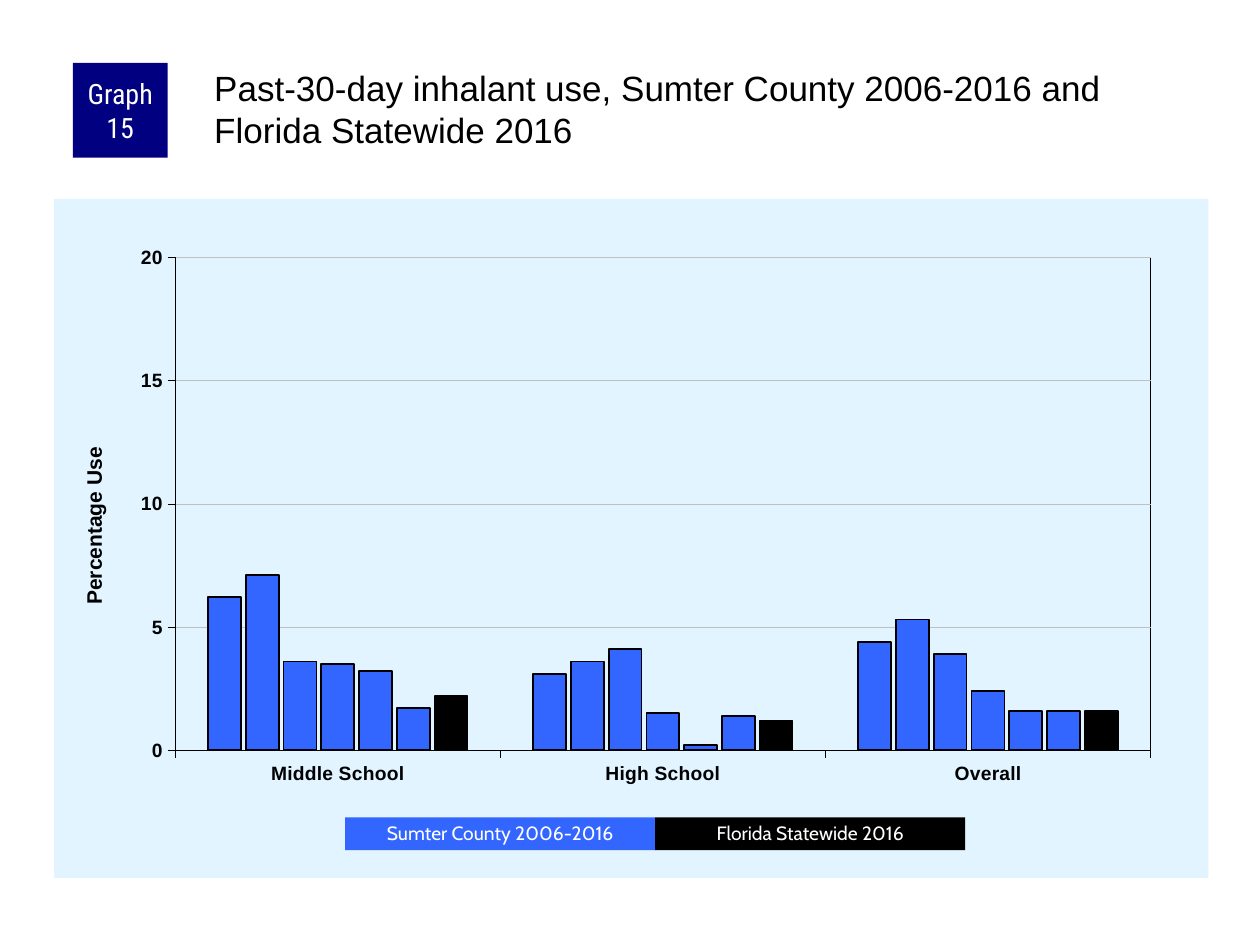
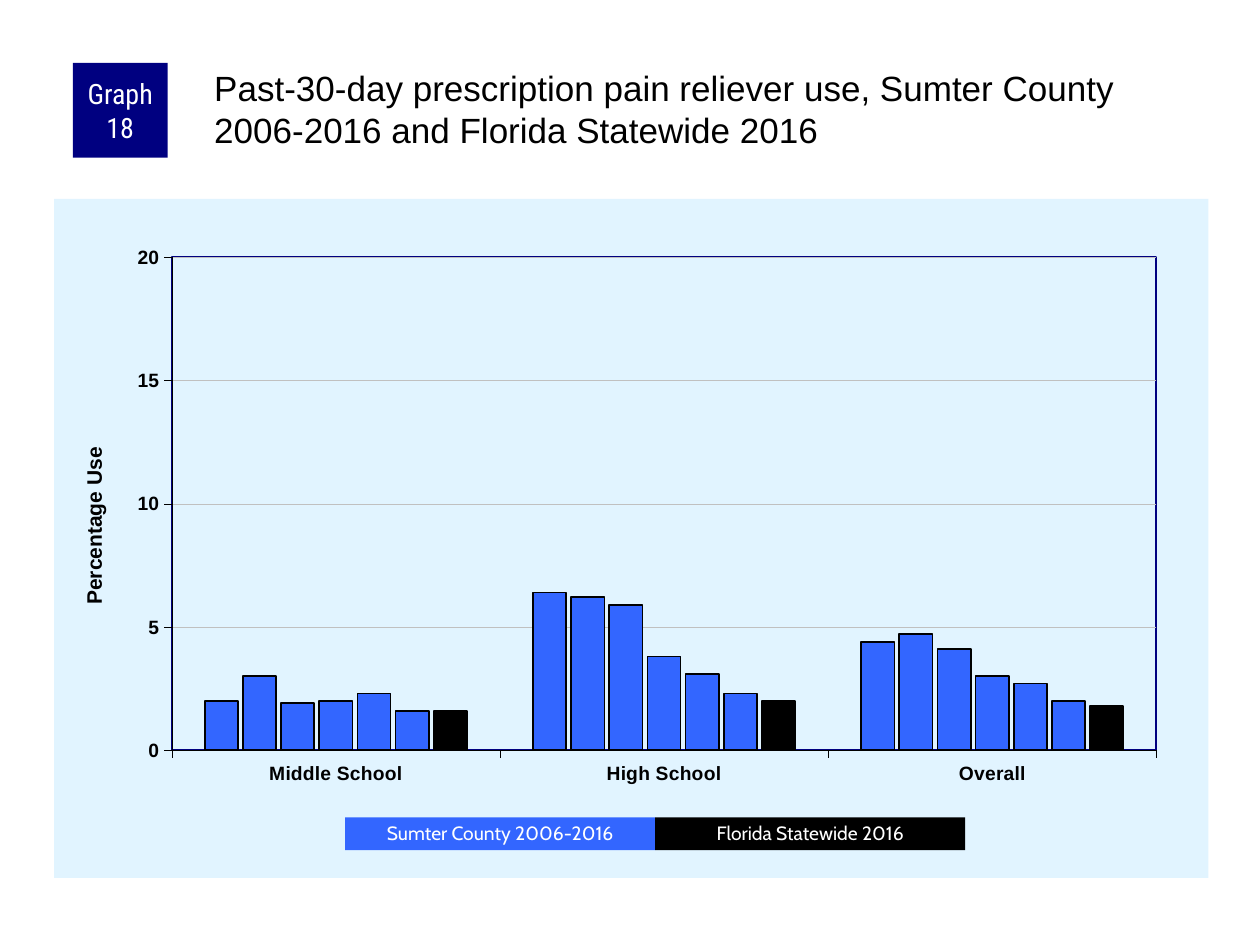
from dataclasses import dataclass

from pptx import Presentation
from pptx import util as u
from pptx.chart.chart import Chart
from pptx.chart.data import CategoryChartData
from pptx.dml.color import RGBColor
from pptx.enum import chart as charts, shapes, text
from pptx.oxml import parse_xml
from pptx.oxml.ns import nsdecls
from pptx.slide import Slide


# Shared look
@dataclass(frozen=True)
class Theme:
    ink: str = "000000"
    paper: str = "FFFFFF"
    navy: str = "000080"
    county: str = "3366FF"
    state: str = "000000"
    panel: str = "E1F4FF"
    grid: str = "C0C0C0"
    body_font: str = "Arial"
    badge_font: str = "Roboto Condensed"
    key_font: str = "Cabin"
    heading_size: float = 20
    badge_size: float = 16
    axis_title_size: float = 12
    label_size: float = 11
    chart_size: float = 8
    hairline: float = 0.25
    bar_line: float = 1


THEME = Theme()


@dataclass(frozen=True)
class Frame:
    """Position and size in centimetres."""
    left: float
    top: float
    width: float
    height: float

    def lengths(self) -> tuple[u.Length, ...]:
        return tuple(u.Cm(v) for v in (self.left, self.top, self.width, self.height))


@dataclass(frozen=True)
class TextStyle:
    font: str
    size: float
    color: str
    centred: bool = True
    spacing: float = 1.0
    insets: tuple[float, float, float, float] = (0.25, 0.13, 0.25, 0.13)


@dataclass(frozen=True)
class KeyEntry:
    label: str
    color: str


@dataclass(frozen=True)
class GraphPage:
    number: int
    heading: str
    plot_left: float
    plot_width: float
    border_color: str
    border_width: float
    county_surveys: tuple[tuple[float, ...], ...]
    statewide: tuple[float, ...]


CHART_FRAME = Frame(1.09, 4.01, 23.27, 13.69)
BADGE_FRAME = Frame(1.47, 1.27, 1.91, 1.91)
HEADING_FRAME = Frame(4.24, 1.27, 20.12, 2.11)
KEY_FRAME = Frame(6.96, 16.48, 6.25, 0.66)

BADGE_STYLE = TextStyle(THEME.badge_font, THEME.badge_size, THEME.paper,
                        insets=(0.13, 0, 0.13, 0))
HEADING_STYLE = TextStyle(THEME.body_font, THEME.heading_size, THEME.ink,
                          centred=False, insets=(0.08, 0.08, 0, 0))
KEY_STYLE = TextStyle(THEME.key_font, THEME.label_size, THEME.paper, spacing=0.9)

LEVELS = ("Middle School", "High School", "Overall")
KEY = (KeyEntry("Sumter County 2006-2016", THEME.county),
       KeyEntry("Florida Statewide 2016", THEME.state))

PAGES = (
    GraphPage(
        15, "Past-30-day inhalant use, Sumter County 2006-2016 and Florida Statewide 2016",
        0.105, 0.845, THEME.ink, THEME.hairline,
        ((6.2, 3.1, 4.4), (7.1, 3.6, 5.3), (3.6, 4.1, 3.9),
         (3.5, 1.5, 2.4), (3.2, 0.2, 1.6), (1.7, 1.4, 1.6)),
        (2.2, 1.2, 1.6)),
    GraphPage(
        18, "Past-30-day prescription pain reliever use, Sumter County 2006-2016 "
            "and Florida Statewide 2016",
        0.102, 0.853, THEME.navy, 1,
        ((2, 6.4, 4.4), (3, 6.2, 4.7), (1.9, 5.9, 4.1),
         (2, 3.8, 3), (2.3, 3.1, 2.7), (1.6, 2.3, 2)),
        (1.6, 2, 1.8)),
)


# Text and boxes
def style_font(font, name: str, size: float, color: str, bold: bool = False) -> None:
    font.name, font.size, font.bold = name, u.Pt(size), bold
    font.color.rgb = RGBColor.from_string(color)


def style_line(line, color: str, width: float) -> None:
    line.color.rgb = RGBColor.from_string(color)
    line.width = u.Pt(width)


def write_text(box, words: str, style: TextStyle) -> None:
    frame = box.text_frame
    frame.word_wrap = True
    frame.vertical_anchor = text.MSO_ANCHOR.MIDDLE if style.centred else text.MSO_ANCHOR.TOP
    (frame.margin_left, frame.margin_top,
     frame.margin_right, frame.margin_bottom) = (u.Cm(v) for v in style.insets)
    para = frame.paragraphs[0]
    para.alignment = text.PP_ALIGN.CENTER if style.centred else text.PP_ALIGN.LEFT
    para.line_spacing = style.spacing
    span = para.add_run()
    span.text = words
    style_font(span.font, style.font, style.size, style.color)


def add_block(page: Slide, frame: Frame, fill: str, words: str, style: TextStyle) -> None:
    box = page.shapes.add_shape(shapes.MSO_SHAPE.RECTANGLE, *frame.lengths())
    box.shadow.inherit = False
    box.fill.solid()
    box.fill.fore_color.rgb = RGBColor.from_string(fill)
    box.line.fill.background()
    write_text(box, words, style)


def add_key(page: Slide) -> None:
    for index, entry in enumerate(KEY):
        frame = Frame(KEY_FRAME.left + index * KEY_FRAME.width, KEY_FRAME.top,
                      KEY_FRAME.width, KEY_FRAME.height)
        add_block(page, frame, entry.color, entry.label, KEY_STYLE)


# Chart
def manual_layout(x: float, y: float, size: tuple[float, float] | None = None):
    settings = [("xMode", "edge"), ("yMode", "edge"), ("x", x), ("y", y)]
    if size:
        settings = [("layoutTarget", "inner"), *settings, ("w", size[0]), ("h", size[1])]
    body = "".join(f'<c:{tag} val="{value}"/>' for tag, value in settings)
    return parse_xml(f'<c:layout {nsdecls("c")}><c:manualLayout>{body}'
                     '</c:manualLayout></c:layout>')


def area_format(fill: str, line: str):
    return parse_xml(f'<c:spPr {nsdecls("c", "a")}>{fill}{line}</c:spPr>')


def solid(color: str) -> str:
    return f'<a:solidFill><a:srgbClr val="{color}"/></a:solidFill>'


def place_chart_areas(chart: Chart, graph: GraphPage) -> None:
    root = chart._chartSpace
    root.xpath("c:chart")[0].addnext(area_format(solid(THEME.panel),
                                               "<a:ln><a:noFill/></a:ln>"))
    plot_area = root.xpath("c:chart/c:plotArea")[0]
    for layout in plot_area.xpath("c:layout"):
        plot_area.remove(layout)
    plot_area.insert(0, manual_layout(graph.plot_left, 0.086, (graph.plot_width, 0.726)))
    border = f'<a:ln w="{u.Pt(graph.border_width)}">{solid(graph.border_color)}</a:ln>'
    plot_area.append(area_format("<a:noFill/>", border))


def add_axis_title(chart: Chart, words: str) -> None:
    frame = chart.value_axis.axis_title.text_frame
    span = frame.paragraphs[0].add_run()
    span.text = words
    style_font(span.font, THEME.body_font, THEME.axis_title_size, THEME.ink, bold=True)
    title = chart._chartSpace.xpath(".//c:valAx/c:title")[0]
    body = title.xpath(".//a:bodyPr")[0]
    body.set("rot", "-5400000")
    body.set("vert", "horz")
    for layout in title.xpath("c:layout"):
        title.remove(layout)
    title.xpath("c:tx")[0].addnext(manual_layout(0.02, 0.36))


def style_axes(chart: Chart) -> None:
    for axis in (chart.category_axis, chart.value_axis):
        axis.major_tick_mark = charts.XL_TICK_MARK.OUTSIDE
        axis.minor_tick_mark = charts.XL_TICK_MARK.NONE
        style_font(axis.tick_labels.font, THEME.body_font, THEME.label_size,
                   THEME.ink, bold=True)
        style_line(axis.format.line, THEME.ink, THEME.hairline)
    scale = chart.value_axis
    scale.minimum_scale, scale.maximum_scale, scale.major_unit = 0, 20, 5
    scale.has_major_gridlines = True
    style_line(scale.major_gridlines.format.line, THEME.grid, THEME.hairline)


def add_usage_chart(page: Slide, graph: GraphPage) -> None:
    data = CategoryChartData()
    data.categories = LEVELS
    for number, values in enumerate((*graph.county_surveys, graph.statewide), 1):
        data.add_series(f"Series {number}", values)
    chart = page.shapes.add_chart(charts.XL_CHART_TYPE.COLUMN_CLUSTERED,
                                  *CHART_FRAME.lengths(), data).chart
    chart.has_title = chart.has_legend = False
    style_font(chart.font, THEME.body_font, THEME.chart_size, THEME.ink)

    plot = chart.plots[0]
    plot.vary_by_categories = False
    plot.gap_width, plot.overlap = 200, -15
    colors = [THEME.county] * len(graph.county_surveys) + [THEME.state]
    for series, color in zip(plot.series, colors):
        series.format.fill.solid()
        series.format.fill.fore_color.rgb = RGBColor.from_string(color)
        style_line(series.format.line, THEME.ink, THEME.bar_line)

    style_axes(chart)
    add_axis_title(chart, "Percentage Use")
    place_chart_areas(chart, graph)


# Pages
def add_graph_page(deck, graph: GraphPage) -> None:
    page = deck.slides.add_slide(deck.slide_layouts[6])
    add_usage_chart(page, graph)
    add_block(page, BADGE_FRAME, THEME.navy, f"Graph {graph.number}", BADGE_STYLE)
    heading = page.shapes.add_textbox(*HEADING_FRAME.lengths())
    write_text(heading, graph.heading, HEADING_STYLE)
    add_key(page)


def main() -> None:
    deck = Presentation()
    deck.slide_width, deck.slide_height = u.Cm(25.4), u.Cm(19.05)
    for graph in PAGES:
        add_graph_page(deck, graph)
    deck.save("out.pptx")


if __name__ == "__main__":
    main()
